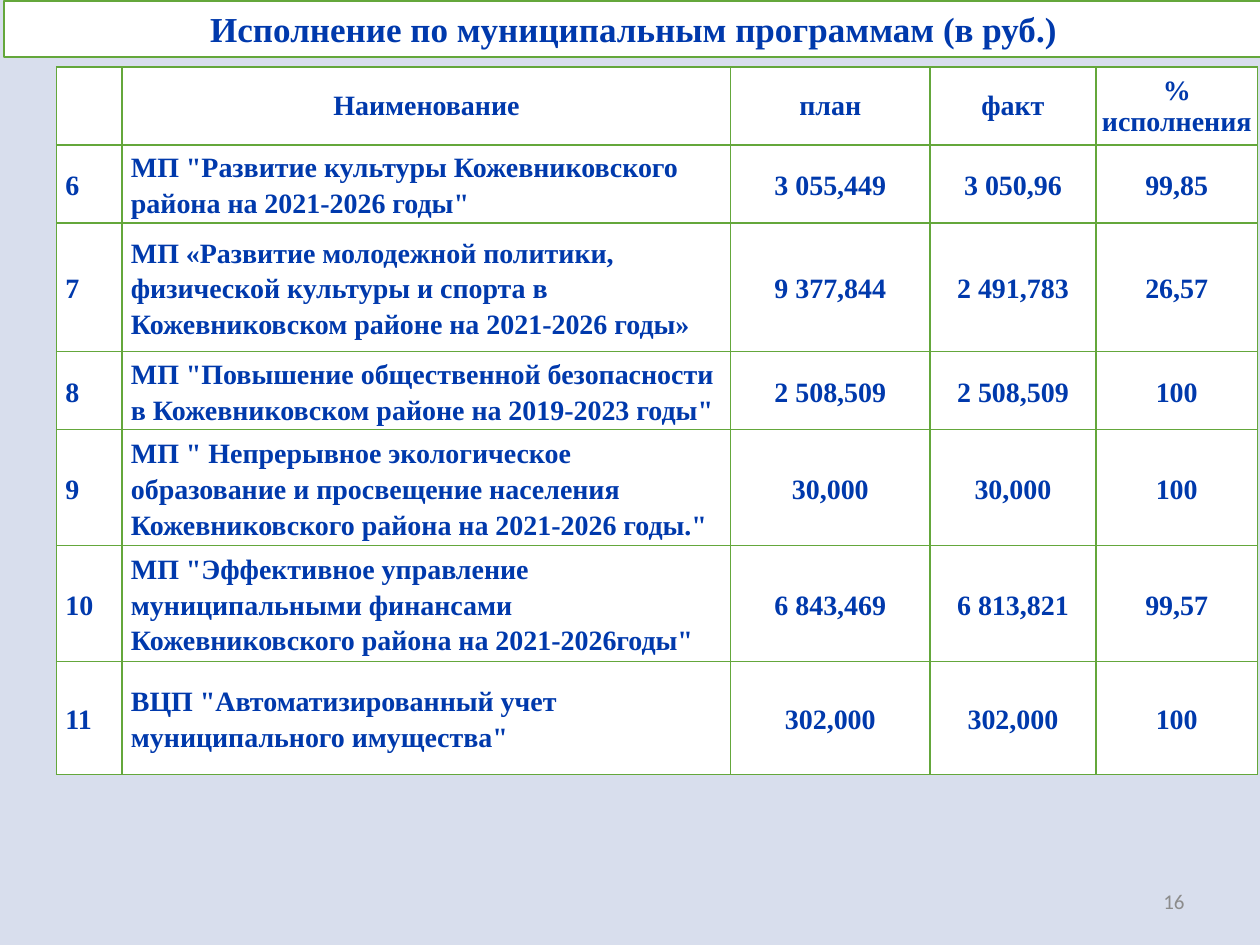
from typing import NamedTuple

from lxml import etree
from pptx import Presentation
from pptx.dml.color import RGBColor
from pptx.enum.text import MSO_ANCHOR, MSO_AUTO_SIZE, PP_ALIGN
from pptx.oxml.ns import qn
from pptx.util import Inches, Pt

LEFT, CENTER, RIGHT = PP_ALIGN.LEFT, PP_ALIGN.CENTER, PP_ALIGN.RIGHT
MIDDLE = MSO_ANCHOR.MIDDLE
NO_AUTOFIT = MSO_AUTO_SIZE.NONE
TITLE_ONLY_LAYOUT = 5

BLUE, GREEN, WHITE, GRAY = "0039AC", "64A73B", "FFFFFF", "8C8C8C"
BACKGROUND = "D8DEED"
SERIF, SANS = "Times New Roman", "Calibri"

COLUMN_WIDTHS = [0.52, 4.83, 1.58, 1.32, 1.28]
ROW_HEIGHTS = [0.62, 0.62, 1.02, 0.62, 0.92, 0.92, 0.9]
COLUMN_ALIGNMENTS = [LEFT, LEFT, CENTER, CENTER, CENTER]
HEADER_MARGINS = (0.01, 0.01, 0.01, 0)
BODY_MARGINS = (0.07, 0, 0.07, 0)
BORDER_TAGS = ("a:lnL", "a:lnR", "a:lnT", "a:lnB")


class Program(NamedTuple):
    number: str
    name: str
    plan: str
    fact: str
    percent: str


HEADER = Program("", "Наименование", "план", "факт", "% исполнения")
PROGRAMS = [
    Program("6", 'МП "Развитие культуры Кожевниковского района на 2021-2026 годы"',
            "3 055,449", "3 050,96", "99,85"),
    Program("7", "МП «Развитие молодежной политики, физической культуры и спорта "
            "в Кожевниковском районе на 2021-2026 годы»",
            "9 377,844", "2 491,783", "26,57"),
    Program("8", 'МП "Повышение общественной безопасности в Кожевниковском районе '
            'на 2019-2023 годы"', "2 508,509", "2 508,509", "100"),
    Program("9", 'МП " Непрерывное экологическое образование и просвещение населения '
            'Кожевниковского района на 2021-2026 годы."', "30,000", "30,000", "100"),
    Program("10", 'МП "Эффективное управление муниципальными финансами '
            'Кожевниковского района на 2021-2026годы"',
            "6 843,469", "6 813,821", "99,57"),
    Program("11", 'ВЦП "Автоматизированный учет муниципального имущества"',
            "302,000", "302,000", "100"),
]


def color(value: str) -> RGBColor:
    return RGBColor.from_string(value)


def fill_with(target, value: str) -> None:
    target.fill.solid()
    target.fill.fore_color.rgb = color(value)


def write(text_frame, text: str, *, size: float = 16, font: str = SERIF,
          text_color: str = BLUE, bold: bool = True, align=CENTER,
          spacing: float = 1.0) -> None:
    text_frame.word_wrap = True
    paragraph = text_frame.paragraphs[0]
    paragraph.alignment = align
    paragraph.line_spacing = spacing
    paragraph.font.size = Pt(size)
    if not text:
        return
    run = paragraph.add_run()
    run.text = text
    run.font.size = Pt(size)
    run.font.name = font
    run.font.bold = bold
    run.font.color.rgb = color(text_color)


def add_borders(cell, value: str, width: float) -> None:
    # Borders must come before the fill in the cell properties
    properties = cell._tc.get_or_add_tcPr()
    for position, tag in enumerate(BORDER_TAGS):
        line = etree.Element(qn(tag), w=str(Pt(width)))
        solid = etree.SubElement(line, qn("a:solidFill"))
        etree.SubElement(solid, qn("a:srgbClr"), val=value)
        properties.insert(position, line)


def format_cell(cell, text: str, align, margins: tuple, spacing: float) -> None:
    left, top, right, bottom = map(Inches, margins)
    cell.margin_left, cell.margin_top = left, top
    cell.margin_right, cell.margin_bottom = right, bottom
    cell.vertical_anchor = MIDDLE
    fill_with(cell, WHITE)
    add_borders(cell, GREEN, 1)
    write(cell.text_frame, text, align=align, spacing=spacing)


def place_title(slide, text: str) -> None:
    title = slide.shapes.title
    title.left, title.top = Inches(0.03), Inches(0.01)
    title.width, title.height = Inches(10), Inches(0.44)
    fill_with(title, WHITE)
    title.line.color.rgb = color(GREEN)
    title.line.width = Pt(1.25)
    title.text_frame.auto_size = NO_AUTOFIT
    title.text_frame.vertical_anchor = MIDDLE
    write(title.text_frame, text, size=20)


def add_program_table(slide, programs: list[Program]) -> None:
    frame = slide.shapes.add_table(
        len(ROW_HEIGHTS), len(COLUMN_WIDTHS), Inches(0.45), Inches(0.53),
        Inches(sum(COLUMN_WIDTHS)), Inches(sum(ROW_HEIGHTS)))
    table = frame.table
    table.horz_banding = False
    for column, width in zip(table.columns, COLUMN_WIDTHS):
        column.width = Inches(width)
    for row, height in zip(table.rows, ROW_HEIGHTS):
        row.height = Inches(height)
    for cell, text in zip(table.rows[0].cells, HEADER):
        format_cell(cell, text, CENTER, HEADER_MARGINS, 1.0)
    for row_index, program in enumerate(programs, start=1):
        for cell, text, align in zip(table.rows[row_index].cells, program,
                                     COLUMN_ALIGNMENTS):
            format_cell(cell, text, align, BODY_MARGINS, 1.15)


def add_page_number(slide, text: str) -> None:
    box = slide.shapes.add_textbox(Inches(7.17), Inches(6.95),
                                   Inches(2.33), Inches(0.4))
    box.text_frame.vertical_anchor = MIDDLE
    write(box.text_frame, text, size=12, font=SANS, text_color=GRAY,
          bold=False, align=RIGHT)


def main() -> None:
    presentation = Presentation()
    presentation.slide_width, presentation.slide_height = Inches(10), Inches(7.5)
    slide = presentation.slides.add_slide(
        presentation.slide_layouts[TITLE_ONLY_LAYOUT])
    fill_with(slide.background, BACKGROUND)

    # Page number, heading and table of programmes
    add_page_number(slide, "16")
    place_title(slide, "Исполнение по муниципальным программам (в руб.)")
    add_program_table(slide, PROGRAMS)
    presentation.save("out.pptx")


if __name__ == "__main__":
    main()
